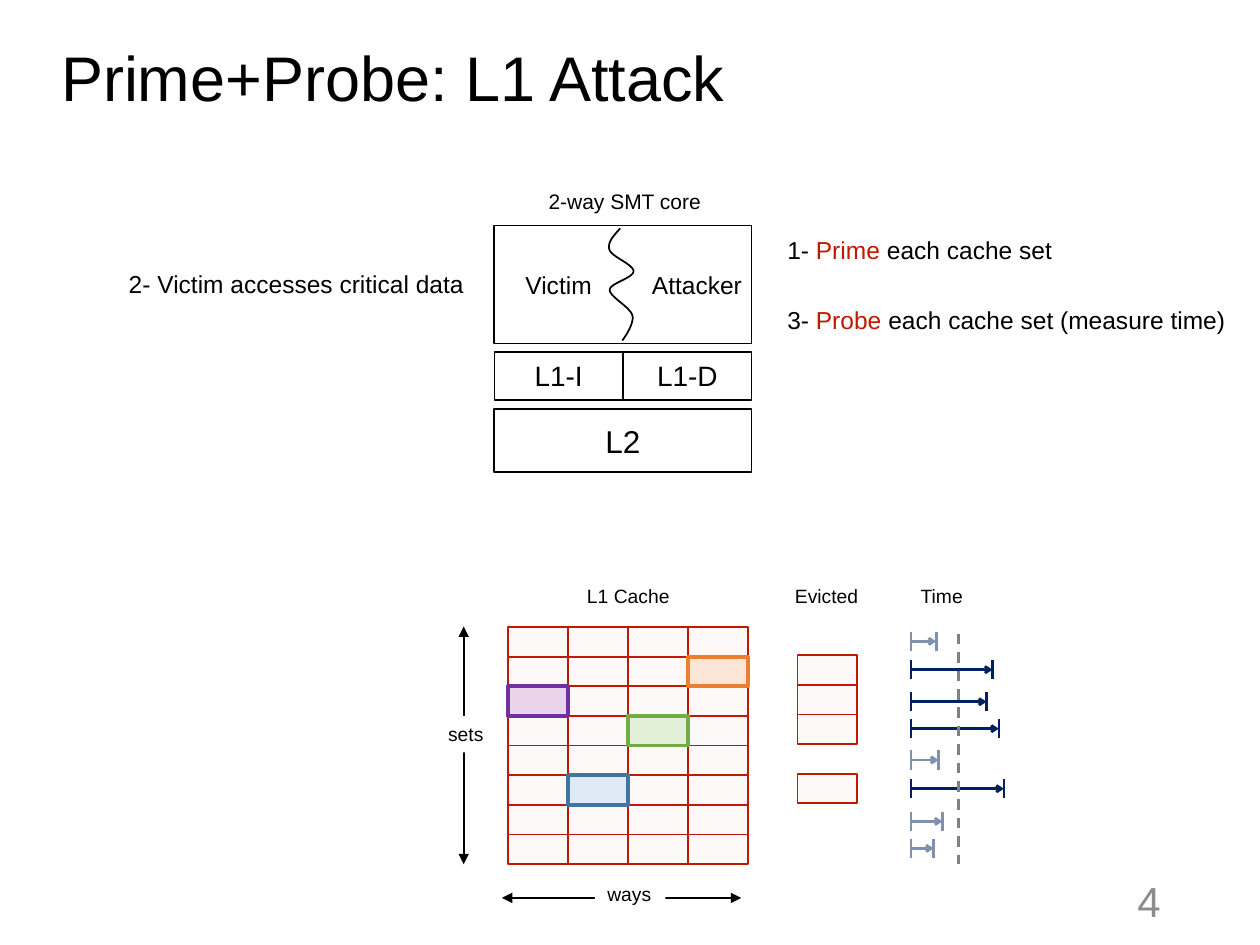
import pptx
import pptx.util
import pptx.dml.color
import pptx.enum.dml
import pptx.enum.shapes
import pptx.enum.text
import pptx.oxml
import pptx.oxml.ns
from lxml import etree

Pt = pptx.util.Pt
ALIGN = pptx.enum.text.PP_ALIGN
ANCHOR = pptx.enum.text.MSO_ANCHOR
FONT = "Arial"
HUES = {
    "black": "000000", "white": "FFFFFF", "gray": "8C8C8C", "dash": "808080",
    "red": "BF1901", "blush": "FDF9F9", "navy": "002060", "slate": "8090AF",
    "green": "70AD47", "mint": "E2F0D9", "blue": "43739E", "sky": "DEEBF7",
    "orange": "ED7D31", "peach": "FBE5D6", "purple": "7030A0", "lilac": "E9D4EA",
}
LEFT, TOP = 290.3, 358.3
WIDE, HIGH = 34.25, 16.94
ROWS, COLS = 8, 4
FINE = 100


def hue(name):
    return pptx.dml.color.RGBColor.from_string(HUES[name])


def write(shape, runs, size, align=ALIGN.LEFT, anchor=ANCHOR.MIDDLE, wrap=True):
    frame = shape.text_frame
    frame.word_wrap = wrap
    frame.vertical_anchor = anchor
    para = frame.paragraphs[0]
    para.alignment = align
    para.font.name = FONT
    para.font.size = Pt(size)
    if len(runs) == 1:
        para.font.color.rgb = hue(runs[0][1])
    for text, color in runs:
        run = para.add_run()
        run.text = text
        if len(runs) > 1:
            run.font.color.rgb = hue(color)
    return para


def label(slide, area, runs, size, **style):
    shape = slide.shapes.add_textbox(*map(Pt, area))
    write(shape, runs, size, **style)


def box(slide, area, fill, edge=None, width=1):
    kind = pptx.enum.shapes.MSO_SHAPE.RECTANGLE
    shape = slide.shapes.add_shape(kind, *map(Pt, area))
    shape.shadow.inherit = False
    shape.fill.solid()
    shape.fill.fore_color.rgb = hue(fill)
    if edge:
        shape.line.color.rgb = hue(edge)
        shape.line.width = Pt(width)
    else:
        shape.line.fill.background()
    return shape


def cell(slide, row, col, fill="blush", edge="red", width=1):
    area = (LEFT + col * WIDE, TOP + row * HIGH, WIDE, HIGH)
    box(slide, area, fill, edge, width)


def line(slide, ends, color, width, head=None, tail=None, dash=False):
    kind = pptx.enum.shapes.MSO_CONNECTOR.STRAIGHT
    link = slide.shapes.add_connector(kind, *map(Pt, ends))
    link.line.color.rgb = hue(color)
    link.line.width = Pt(width)
    if dash:
        link.line.dash_style = pptx.enum.dml.MSO_LINE.DASH
    stroke = link.line._get_or_add_ln()
    for tag, form in (("a:headEnd", head), ("a:tailEnd", tail)):
        if form:
            tip = etree.SubElement(stroke, pptx.oxml.ns.qn(tag), type=form)
            if form == "arrow":
                tip.set("w", "sm")
                tip.set("len", "sm")
    etree.SubElement(link._element.spPr, pptx.oxml.ns.qn("a:effectLst"))


def bend(start, curves, steps=16):
    points = []
    for one, two, end in curves:
        for step in range(1, steps + 1):
            t = step / steps
            u = 1 - t
            points.append(tuple(
                FINE * (u**3 * a + 3 * u * u * t * b + 3 * u * t * t * c + t**3 * d)
                for a, b, c, d in zip(start, one, two, end)))
        start = end
    return points


def wave(slide):
    start = (354.4, 130.5)
    curves = [
        ((350.6, 134.8), (347, 138.4), (348.2, 142.6)),
        ((349.4, 146.8), (362, 151), (362, 155)),
        ((362, 159), (348.2, 161.8), (348.4, 165.8)),
        ((348.6, 169.8), (360.2, 175.4), (361.4, 180.4)),
        ((362.6, 185.4), (355.6, 194.6), (355.6, 194.6)),
    ]
    x, y = start
    pen = slide.shapes.build_freeform(x * FINE, y * FINE, scale=Pt(1) / FINE)
    pen.add_line_segments(bend(start, curves), close=False)
    shape = pen.convert_to_shape()
    shape.shadow.inherit = False
    shape.fill.background()
    shape.line.color.rgb = hue("black")
    shape.line.width = Pt(1)


def core(slide):
    box(slide, (282.5, 128.9, 147, 67.5), "white", "black")
    parts = [("L2", 282.5, 233.8, 147, 36, 18), ("L1-I", 282.5, 201, 73.5, 27.4, 16),
             ("L1-D", 356, 201, 73.5, 27.4, 16)]
    for text, x, y, w, h, size in parts:
        shape = box(slide, (x, y, w, h), "white", "black")
        write(shape, [(text, "black")], size, ALIGN.CENTER)
    for text, x in (("Attacker", 356.9), ("Victim", 277.8)):
        label(slide, (x, 149.4, 82.8, 26.6), [(text, "black")], 14, align=ALIGN.CENTER)
    wave(slide)
    label(slide, (305.2, 104.4, 103.7, 21.6), [("2-way SMT core", "black")], 12,
          align=ALIGN.CENTER, anchor=ANCHOR.TOP, wrap=False)


def steps(slide):
    label(slide, (442.8, 129.3, 177, 26.6),
          [("1-", "black"), (" Prime", "red"), (" each cache set", "black")], 14)
    label(slide, (66.5, 148.8, 210.5, 26.6),
          [("2- Victim accesses critical data", "black")], 14)
    label(slide, (442.8, 169.2, 266, 26.6),
          [("3-", "black"), (" Probe ", "red"),
           ("each cache set (measure time)", "black")], 14)


def cache(slide):
    marks = {(3, 2): ("mint", "green"), (5, 1): ("sky", "blue"),
             (1, 3): ("peach", "orange"), (2, 0): ("lilac", "purple")}
    for row in range(ROWS):
        for col in range(COLS):
            if (row, col) not in marks:
                cell(slide, row, col)
    for (row, col), tones in marks.items():
        cell(slide, row, col, *tones, width=2.25)
    for ends, area, text in (
            ((286.8, 513.1, 423.6, 513.1), (340, 500.4, 40.3, 20.9), "ways"),
            ((265, 358, 265, 493.9), (249, 409, 36, 20.9), "sets")):
        line(slide, ends, "black", 1, head="triangle", tail="triangle")
        shape = box(slide, area, "white")
        write(shape, [(text, "black")], 11, anchor=ANCHOR.TOP, wrap=False)
    for row in (1, 2, 3, 5):
        cell(slide, row - 0.05, 4.83)
    for text, x, w in (("L1 Cache", 328.1, 61.9), ("Evicted", 446.8, 51.1),
                       ("Time", 518.7, 38.9)):
        label(slide, (x, 330.5, w, 20.9), [(text, "black")], 11,
              align=ALIGN.CENTER, anchor=ANCHOR.TOP, wrap=False)


def times(slide):
    start, tick = 520.6, 5.5
    spans = [(366.5, 14.4), (382.7, 46.6), (401, 43.2), (416.4, 50.2),
             (434.3, 15.8), (450.7, 53.1), (469.4, 18), (484.8, 13)]
    for y, span in spans:
        color = "navy" if span > 30 else "slate"
        end = start + span
        line(slide, (start, y, end, y), color, 1.5, tail="arrow")
        for x in (start, end):
            line(slide, (x, y + tick, x, y - tick), color, 1.5)
    line(slide, (547.9, 362.2, 547.9, 493.9), "dash", 1.5, dash=True)


def main():
    deck = pptx.Presentation()
    deck.slide_width, deck.slide_height = Pt(720), Pt(540)
    slide = deck.slides.add_slide(deck.slide_layouts[5])
    title = slide.shapes.title
    title.left, title.top, title.width, title.height = map(Pt, (27.7, 18.7, 620.6, 55.4))
    para = write(title, [("Prime+Probe: L1 Attack", "black")], 36)
    para.line_spacing = 0.9
    label(slide, (508.3, 500.4, 162, 28.8), [("4", "gray")], 24, align=ALIGN.RIGHT)
    core(slide)
    steps(slide)
    cache(slide)
    times(slide)
    deck.save("out.pptx")


if __name__ == "__main__":
    main()
